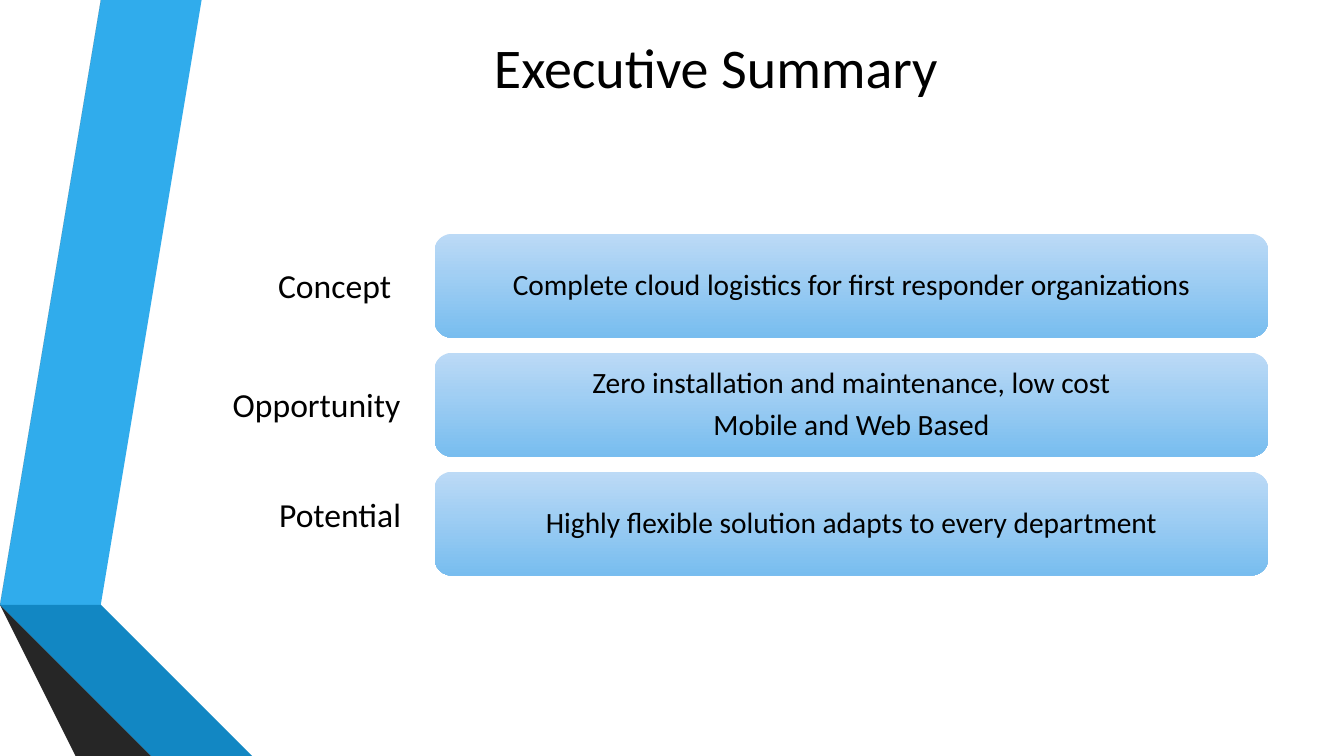
"""Build the Executive Summary slide with three labelled bars."""
from dataclasses import dataclass

from pptx import Presentation
from pptx.dml.color import RGBColor
from pptx.enum.shapes import MSO_SHAPE
from pptx.enum.text import MSO_ANCHOR, MSO_AUTO_SIZE, PP_ALIGN
from pptx.slide import Slide
from pptx.util import Inches, Pt

COLORS = {
    "text": "000000",
    "bar_top": "BCDAF6",
    "bar_bottom": "78BDEF",
    "blue": "30ACEC",
    "gray": "595959",
    "gray_edge": "262626",
    "blue_edge": "0C5A82",
    "blue_fold": "1287C3",
    "gray_fold": "404040",
}
FONT = "Calibri"
BAR_LEFT, BAR_TOP, BAR_WIDTH, BAR_HEIGHT, BAR_PITCH = 4.31, 2.32, 8.27, 1.03, 1.18
BAR_TEXT_SIZE = 21
BAR_TEXT_INSET_X, BAR_TEXT_INSET_Y = 0.4, 0.05
LABEL_RIGHT, LABEL_HEIGHT = 4.13, 0.5


@dataclass(frozen=True)
class Ribbon:
    color: str
    points: tuple[tuple[float, float], ...]


@dataclass(frozen=True)
class SummaryRow:
    label: str
    label_top: float
    label_width: float
    wrap_label: bool
    lines: tuple[str, ...]


RIBBONS = (
    Ribbon("blue", ((0.5, 5.78), (0.77, 5.83), (1.73, 0), (1.45, 0))),
    Ribbon("gray", ((1.39, 0), (1.11, 0), (0.16, 5.73), (0.44, 5.77))),
    Ribbon("gray_edge", ((0.16, 5.73), (1.45, 7.5), (1.51, 7.5))),
    Ribbon("blue_edge", ((0.5, 5.79), (2.08, 7.5), (2.14, 7.5))),
    Ribbon("blue_fold", ((0.5, 5.78), (2.14, 7.5), (2.83, 7.5), (0.77, 5.83))),
    Ribbon("gray_fold", ((2.02, 7.5), (0.48, 5.83), (0.44, 5.77), (0.16, 5.73), (1.51, 7.5))),
)
ROWS = (
    SummaryRow("Concept", 2.58, 1.47, True,
               ("Complete cloud logistics for first responder organizations",)),
    SummaryRow("Opportunity", 3.76, 1.92, False,
               ("Zero installation and maintenance, low cost", "Mobile and Web Based")),
    SummaryRow("Potential", 4.85, 1.46, False,
               ("Highly flexible solution adapts to every department",)),
)


def add_text(slide: Slide, lines: tuple[str, ...], left: float, top: float, width: float,
             height: float, *, size: float, align: PP_ALIGN = PP_ALIGN.LEFT,
             anchor: MSO_ANCHOR = MSO_ANCHOR.TOP, wrap: bool = True, grow: bool = False,
             inset: float | None = None, line_spacing: float | None = None,
             space_after: float = 0) -> None:
    shape = slide.shapes.add_textbox(Inches(left), Inches(top), Inches(width), Inches(height))
    frame = shape.text_frame
    frame.word_wrap = wrap
    frame.vertical_anchor = anchor
    frame.auto_size = MSO_AUTO_SIZE.SHAPE_TO_FIT_TEXT if grow else MSO_AUTO_SIZE.NONE
    if inset is not None:
        frame.margin_left = frame.margin_right = Inches(inset)
        frame.margin_top = frame.margin_bottom = Inches(inset)
    for index, line in enumerate(lines):
        paragraph = frame.add_paragraph() if index else frame.paragraphs[0]
        paragraph.alignment = align
        paragraph.line_spacing = line_spacing
        paragraph.space_after = Pt(space_after)
        run = paragraph.add_run()
        run.text = line
        run.font.name = FONT
        run.font.size = Pt(size)
        run.font.color.rgb = RGBColor.from_string(COLORS["text"])


def add_ribbon(slide: Slide, ribbon: Ribbon) -> None:
    start, *others = ribbon.points
    builder = slide.shapes.build_freeform(*start, scale=Inches(1))
    builder.add_line_segments(others, close=True)
    shape = builder.convert_to_shape()
    shape.shadow.inherit = False
    shape.fill.solid()
    shape.fill.fore_color.rgb = RGBColor.from_string(COLORS[ribbon.color])
    shape.line.fill.background()


def add_bar(slide: Slide, top: float) -> None:
    shape = slide.shapes.add_shape(MSO_SHAPE.ROUNDED_RECTANGLE, Inches(BAR_LEFT), Inches(top),
                                   Inches(BAR_WIDTH), Inches(BAR_HEIGHT))
    shape.shadow.inherit = False
    shape.line.fill.background()
    shape.fill.gradient()
    shape.fill.gradient_angle = 270
    for stop, position, color in zip(shape.fill.gradient_stops, (0, 1), ("bar_top", "bar_bottom")):
        stop.position = position
        stop.color.rgb = RGBColor.from_string(COLORS[color])


def add_row(slide: Slide, row: SummaryRow, top: float) -> None:
    add_bar(slide, top)
    add_text(slide, row.lines, BAR_LEFT + BAR_TEXT_INSET_X, top + BAR_TEXT_INSET_Y,
             BAR_WIDTH - 2 * BAR_TEXT_INSET_X, BAR_HEIGHT - 2 * BAR_TEXT_INSET_Y,
             size=BAR_TEXT_SIZE, align=PP_ALIGN.CENTER, anchor=MSO_ANCHOR.MIDDLE, inset=0.09,
             line_spacing=0.9, space_after=0.35 * BAR_TEXT_SIZE)
    add_text(slide, (row.label,), LABEL_RIGHT - row.label_width, row.label_top,
             row.label_width, LABEL_HEIGHT, size=24, wrap=row.wrap_label, grow=True)


def main() -> None:
    presentation = Presentation()
    presentation.slide_width = Inches(13.33)
    presentation.slide_height = Inches(7.5)
    slide = presentation.slides.add_slide(presentation.slide_layouts[6])
    for ribbon in RIBBONS:
        add_ribbon(slide, ribbon)
    add_text(slide, ("Executive Summary",), 1.62, 0.29, 10.96, 0.73, size=40,
             align=PP_ALIGN.CENTER, anchor=MSO_ANCHOR.MIDDLE)
    for index, row in enumerate(ROWS):
        add_row(slide, row, BAR_TOP + index * BAR_PITCH)
    presentation.save("out.pptx")


if __name__ == "__main__":
    main()
